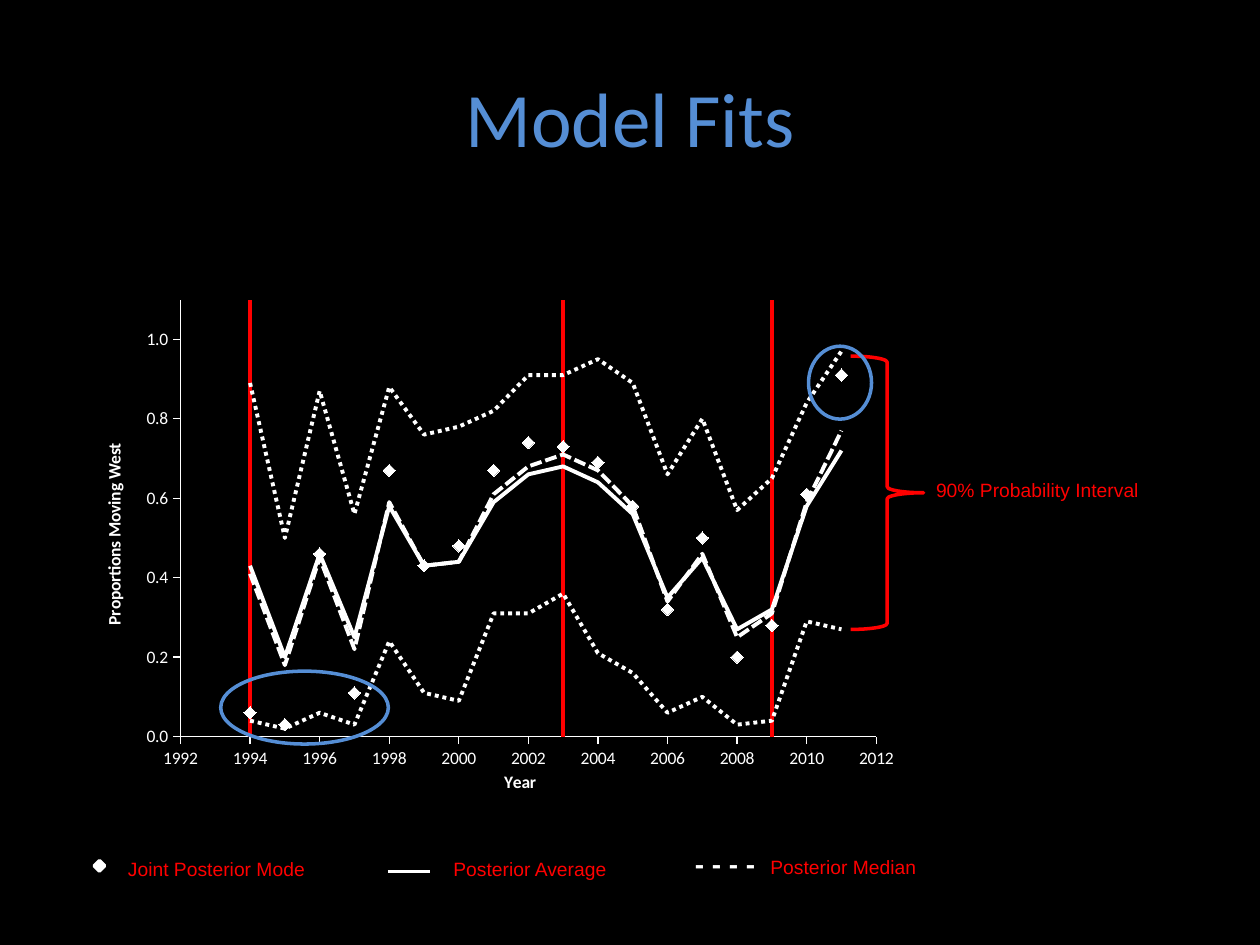
from dataclasses import dataclass

from lxml import etree
from pptx import Presentation
from pptx.chart.data import XyChartData
from pptx.dml.color import RGBColor
from pptx.enum.chart import XL_CHART_TYPE, XL_MARKER_STYLE, XL_TICK_MARK
from pptx.enum.dml import MSO_LINE
from pptx.enum.shapes import MSO_CONNECTOR, MSO_SHAPE
from pptx.enum.text import MSO_ANCHOR, PP_ALIGN
from pptx.oxml.ns import qn
from pptx.util import Cm, Pt

SCATTER = XL_CHART_TYPE.XY_SCATTER_LINES_NO_MARKERS
DIAMOND, NO_MARKER = XL_MARKER_STYLE.DIAMOND, XL_MARKER_STYLE.NONE
TICK_OUT, TICK_NONE = XL_TICK_MARK.OUTSIDE, XL_TICK_MARK.NONE
DOT, DASH = MSO_LINE.ROUND_DOT, MSO_LINE.SQUARE_DOT


@dataclass(frozen=True)
class Theme:
    back: RGBColor = RGBColor(0, 0, 0)
    ink: RGBColor = RGBColor(255, 255, 255)
    note: RGBColor = RGBColor(255, 0, 0)
    accent: RGBColor = RGBColor(0x55, 0x8E, 0xD5)
    head_font: str = "Calibri"
    body_font: str = "Arial"
    title: float = 44
    dash: float = 16
    label: float = 11
    axis: float = 10
    line: float = 2
    series: float = 2.25
    thin: float = 0.75


T = Theme()

YEARS = range(1994, 2012)
MARKED_YEARS = (1994, 2003, 2009)
# name, values, dash style
FITS = [
    ("Posterior Average", [0.43, 0.2, 0.46, 0.25, 0.58, 0.43, 0.44, 0.59, 0.66,
                           0.68, 0.64, 0.56, 0.35, 0.45, 0.27, 0.32, 0.58, 0.72], None),
    ("Lower bound", [0.04, 0.02, 0.06, 0.03, 0.24, 0.11, 0.09, 0.31, 0.31,
                     0.36, 0.21, 0.16, 0.06, 0.1, 0.03, 0.04, 0.29, 0.27], DOT),
    ("Posterior Median", [0.41, 0.18, 0.45, 0.22, 0.59, 0.43, 0.44, 0.61, 0.68,
                          0.71, 0.67, 0.58, 0.34, 0.46, 0.25, 0.31, 0.59, 0.77], DASH),
    ("Upper bound", [0.89, 0.5, 0.87, 0.56, 0.88, 0.76, 0.78, 0.82, 0.91,
                     0.91, 0.95, 0.89, 0.66, 0.8, 0.57, 0.65, 0.84, 0.97], DOT),
]
MODE = [0.06, 0.03, 0.46, 0.11, 0.67, 0.43, 0.48, 0.67, 0.74,
        0.73, 0.69, 0.58, 0.32, 0.5, 0.2, 0.28, 0.61, 0.91]


def style_font(font, size, color, name, bold=False):
    font.size, font.name, font.bold = Pt(size), name, bold
    font.color.rgb = color


def add_run(p, text, size=T.label, color=T.note, font=T.body_font, bold=False):
    r = p.add_run()
    r.text = text
    style_font(r.font, size, color, font, bold)


def add_text(slide, text, x, y, w, h, align=PP_ALIGN.LEFT, anchor=MSO_ANCHOR.TOP, **fmt):
    tf = slide.shapes.add_textbox(Cm(x), Cm(y), Cm(w), Cm(h)).text_frame
    tf.word_wrap, tf.vertical_anchor = True, anchor
    p = tf.paragraphs[0]
    p.alignment = align
    if text:
        add_run(p, text, **fmt)
    return p


def add_mark(slide, kind, x, y, w, h, color, fill=None):
    sp = slide.shapes.add_shape(kind, Cm(x), Cm(y), Cm(w), Cm(h))
    sp.shadow.inherit = False
    sp.line.color.rgb, sp.line.width = color, Pt(T.line)
    if fill is None:
        sp.fill.background()
    else:
        sp.fill.solid()
        sp.fill.fore_color.rgb = fill


def set_plot_area(chart, x, y, w, h):
    area = chart._chartSpace.chart.plotArea
    for old in area.findall(qn("c:layout")):
        area.remove(old)
    layout = etree.Element(qn("c:layout"))
    area.insert(0, layout)
    manual = etree.SubElement(layout, qn("c:manualLayout"))
    for tag, val in [("layoutTarget", "inner"), ("xMode", "edge"), ("yMode", "edge"),
                     ("x", x), ("y", y), ("w", w), ("h", h)]:
        etree.SubElement(manual, qn("c:" + tag)).set("val", str(val))


def style_axis(axis, title, low, high, step, number_format):
    axis.minimum_scale, axis.maximum_scale, axis.major_unit = low, high, step
    axis.has_major_gridlines = False
    axis.major_tick_mark, axis.minor_tick_mark = TICK_OUT, TICK_NONE
    axis.format.line.color.rgb, axis.format.line.width = T.ink, Pt(T.thin)
    labels = axis.tick_labels
    labels.number_format, labels.number_format_is_linked = number_format, False
    style_font(labels.font, T.axis, T.ink, T.head_font)
    p = axis.axis_title.text_frame.paragraphs[0]
    add_run(p, title, T.axis, T.ink, T.head_font, bold=True)


def style_line(series, color, dash=None):
    series.smooth = False
    series.marker.style = NO_MARKER
    line = series.format.line
    line.color.rgb, line.width = color, Pt(T.series)
    if dash is not None:
        line.dash_style = dash


def add_fit_chart(slide, x, y, w, h):
    data = XyChartData()
    curves = [(name, zip(YEARS, vals)) for name, vals, _ in FITS]
    curves.append(("Joint Posterior Mode", zip(YEARS, MODE)))
    curves += [(f"Year {year}", [(year, -1), (year, 1.1)]) for year in MARKED_YEARS]
    for name, points in curves:
        s = data.add_series(name)
        for point in points:
            s.add_data_point(*point)
    chart = slide.shapes.add_chart(SCATTER, Cm(x), Cm(y), Cm(w), Cm(h), data).chart
    chart.has_legend = chart.has_title = False
    style_font(chart.font, T.axis, T.ink, T.head_font)
    plot = chart.plots[0]
    plot.vary_by_categories = False
    set_plot_area(chart, 0.116, 0.051, 0.839, 0.833)
    style_axis(chart.category_axis, "Year", 1992, 2012, 2, "0")
    style_axis(chart.value_axis, "Proportions Moving West", 0, 1.1, 0.2, "0.0")

    series = list(plot.series)
    n = len(FITS)
    for s, (_, _, dash) in zip(series, FITS):
        style_line(s, T.ink, dash)
    for s in series[n + 1:]:
        style_line(s, T.note)
    mode = series[n]
    mode.smooth = False
    mode.format.line.fill.background()
    mode.marker.style, mode.marker.size = DIAMOND, 7
    mode.marker.format.fill.solid()
    mode.marker.format.fill.fore_color.rgb = T.ink
    mode.marker.format.line.color.rgb = T.ink


def add_annotations(slide, x, y):
    # Interval brace and its label
    add_mark(slide, MSO_SHAPE.RIGHT_BRACE, x + 15.45, y + 1.68, 1.47, 5.51, T.note)
    add_text(slide, "90% Probability Interval", x + 16.92, y + 4.02, 5.28, 0.74)
    # Rings around the outlying modes
    for dx, dy, w in [(14.6, 1.48, 1.27), (2.75, 8.03, 3.38)]:
        add_mark(slide, MSO_SHAPE.OVAL, x + dx, y + dy, w, 1.47, T.accent)


def add_key(slide, x, y):
    # Mode: diamond
    add_mark(slide, MSO_SHAPE.DIAMOND, x, y + 0.41, 0.21, 0.21, T.ink, T.ink)
    add_text(slide, "Joint Posterior Mode", x + 0.43, y + 0.21, 4.45, 0.74)
    # Average: solid line
    line_y = Cm(y + 0.63)
    cx = slide.shapes.add_connector(MSO_CONNECTOR.STRAIGHT, Cm(x + 5.92), line_y,
                                    Cm(x + 6.77), line_y)
    cx.line.color.rgb, cx.line.width = T.ink, Pt(T.line)
    etree.SubElement(cx._element.spPr, qn("a:effectLst"))
    add_text(slide, "Posterior Average", x + 6.99, y + 0.21, 4.23, 0.74)
    # Median: dashes, then a tab stop
    p = add_text(slide, "", x + 11.86, y, 5.28, 0.94)
    tabs = etree.SubElement(p._p.get_or_add_pPr(), qn("a:tabLst"))
    etree.SubElement(tabs, qn("a:tab"), pos=str(Cm(1.52)), algn="l")
    add_run(p, "- - - -", T.dash, T.ink, bold=True)
    add_run(p, "\tPosterior Median")


def main():
    prs = Presentation()
    prs.slide_width, prs.slide_height = Cm(25.4), Cm(19.05)
    slide = prs.slides.add_slide(prs.slide_layouts[6])
    slide.background.fill.solid()
    slide.background.fill.fore_color.rgb = T.back
    add_text(slide, "Model Fits", 0, 0.76, 25.4, 3.18, PP_ALIGN.CENTER, MSO_ANCHOR.MIDDLE,
             size=T.title, color=T.accent, font=T.head_font)
    add_fit_chart(slide, 1.7, 5.5, 16.72, 10.58)
    add_annotations(slide, 1.7, 5.5)
    add_key(slide, 1.9, 16.94)
    prs.save("out.pptx")


if __name__ == "__main__":
    main()
